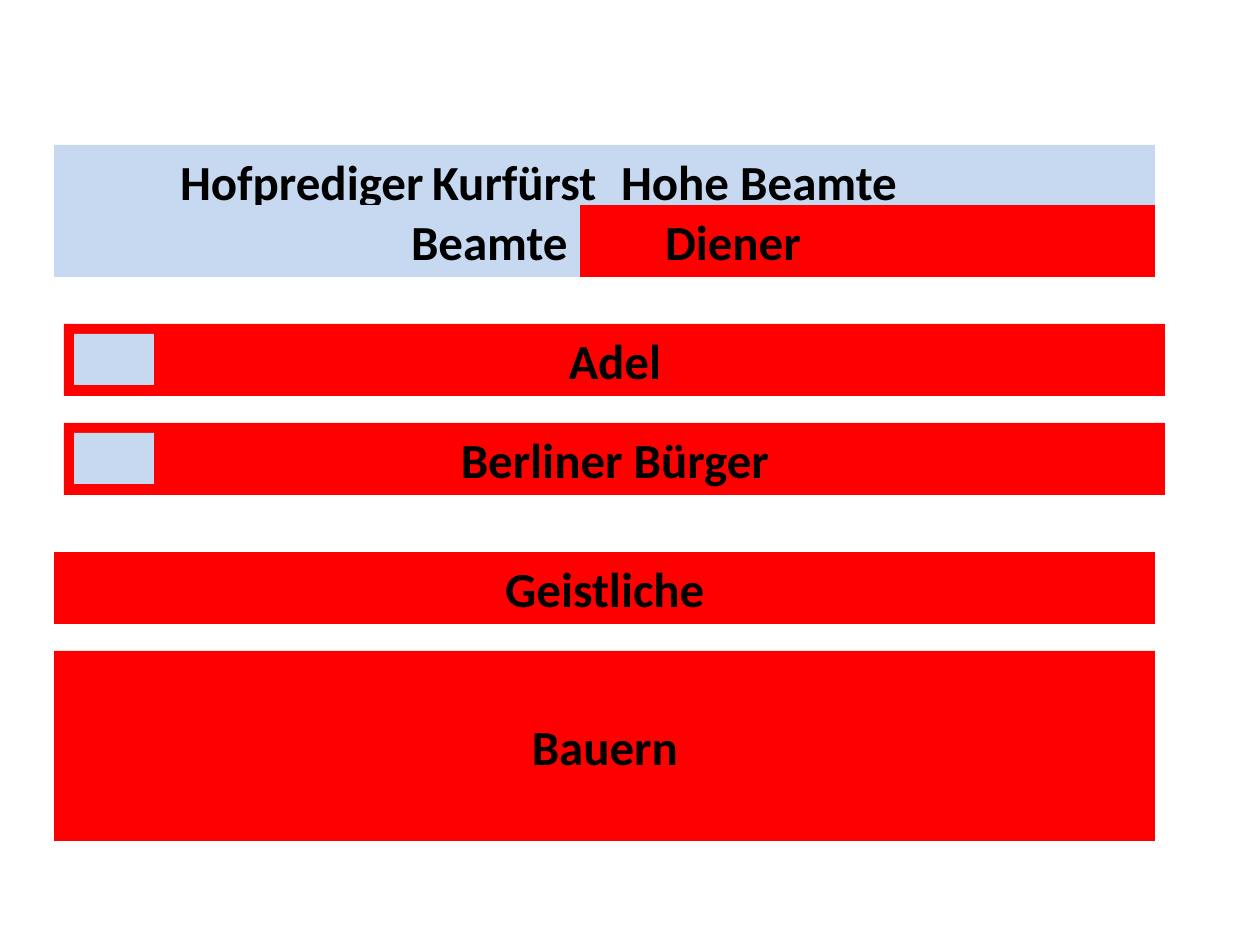
"""Build the slide of the estates in Berlin, split into two coloured groups."""
from dataclasses import dataclass

from lxml import etree
from pptx import Presentation
from pptx import util as u
from pptx.dml.color import RGBColor
from pptx.enum import shapes, text
from pptx.oxml.ns import qn


@dataclass(frozen=True)
class Theme:
    blue: str = "C6D9F1"
    red: str = "FF0000"
    ink: str = "000000"
    font: str = "Calibri"
    size: int = 28


THEME = Theme()
LEFT, SHIFTED, WIDTH, BAR_HEIGHT = 54, 64, 1101, 72
COURT_TOP, SERVICE_TOP = 145, 205
ALIGN = text.PP_ALIGN


def px(length):
    return u.Emu(round(length * 914400 / 126))


def paint(shape, color):
    shape.fill.solid()
    shape.fill.fore_color.rgb = RGBColor.from_string(color)
    shape.line.fill.background()


def write(shape, wording, align=ALIGN.CENTER, inset=13, tabs=()):
    frame = shape.text_frame
    frame.text = wording
    frame.word_wrap = True
    frame.margin_left = px(inset)
    paragraph = frame.paragraphs[0]
    paragraph.alignment = align
    paragraph.space_before = u.Pt(0)
    if tabs:
        stops = etree.SubElement(paragraph._p.get_or_add_pPr(), qn("a:tabLst"))
        for position in tabs:
            etree.SubElement(stops, qn("a:tab"), pos=str(px(position)), algn="l")
    for run in paragraph.runs:
        run.font.name = THEME.font
        run.font.size = u.Pt(THEME.size)
        run.font.bold = True
        run.font.color.rgb = RGBColor.from_string(THEME.ink)


def add_bar(slide, left, top, width, height, color):
    shape = slide.shapes.add_shape(
        shapes.MSO_SHAPE.RECTANGLE, px(left), px(top), px(width), px(height))
    shape.shadow.inherit = False
    paint(shape, color)
    shape.text_frame.vertical_anchor = text.MSO_ANCHOR.MIDDLE
    return shape


def add_court(slide):
    court = slide.placeholders[1]
    court.left, court.top = px(LEFT), px(COURT_TOP)
    court.width, court.height = px(WIDTH), px(SERVICE_TOP - COURT_TOP)
    paint(court, THEME.blue)
    court.text_frame.auto_size = text.MSO_AUTO_SIZE.NONE
    court.text_frame.vertical_anchor = text.MSO_ANCHOR.TOP
    write(court, "Hofprediger\tKurfürst\tHohe Beamte", ALIGN.LEFT, 126, (332, 585))


def add_service(slide):
    servants = add_bar(slide, LEFT, SERVICE_TOP, WIDTH, BAR_HEIGHT, THEME.red)
    write(servants, "Diener", ALIGN.LEFT, 611)
    officials = add_bar(slide, LEFT, SERVICE_TOP, 526, BAR_HEIGHT, THEME.blue)
    write(officials, "Beamte", ALIGN.RIGHT)


def add_estate(slide, wording, left, top, height=BAR_HEIGHT, marked=False):
    write(add_bar(slide, left, top, WIDTH, height, THEME.red), wording)
    if marked:
        add_bar(slide, left + 10, top + 10, 80, 51, THEME.blue)


def main():
    presentation = Presentation()
    presentation.slide_width, presentation.slide_height = px(1260), px(945)
    slide = presentation.slides.add_slide(presentation.slide_layouts[0])
    title = slide.shapes.title._element
    title.getparent().remove(title)
    add_court(slide)
    add_service(slide)
    add_estate(slide, "Adel", SHIFTED, 324, marked=True)
    add_estate(slide, "Berliner Bürger", SHIFTED, 423, marked=True)
    add_estate(slide, "Geistliche", LEFT, 552)
    add_estate(slide, "Bauern", LEFT, 651, height=190)
    presentation.save("out.pptx")


if __name__ == "__main__":
    main()
